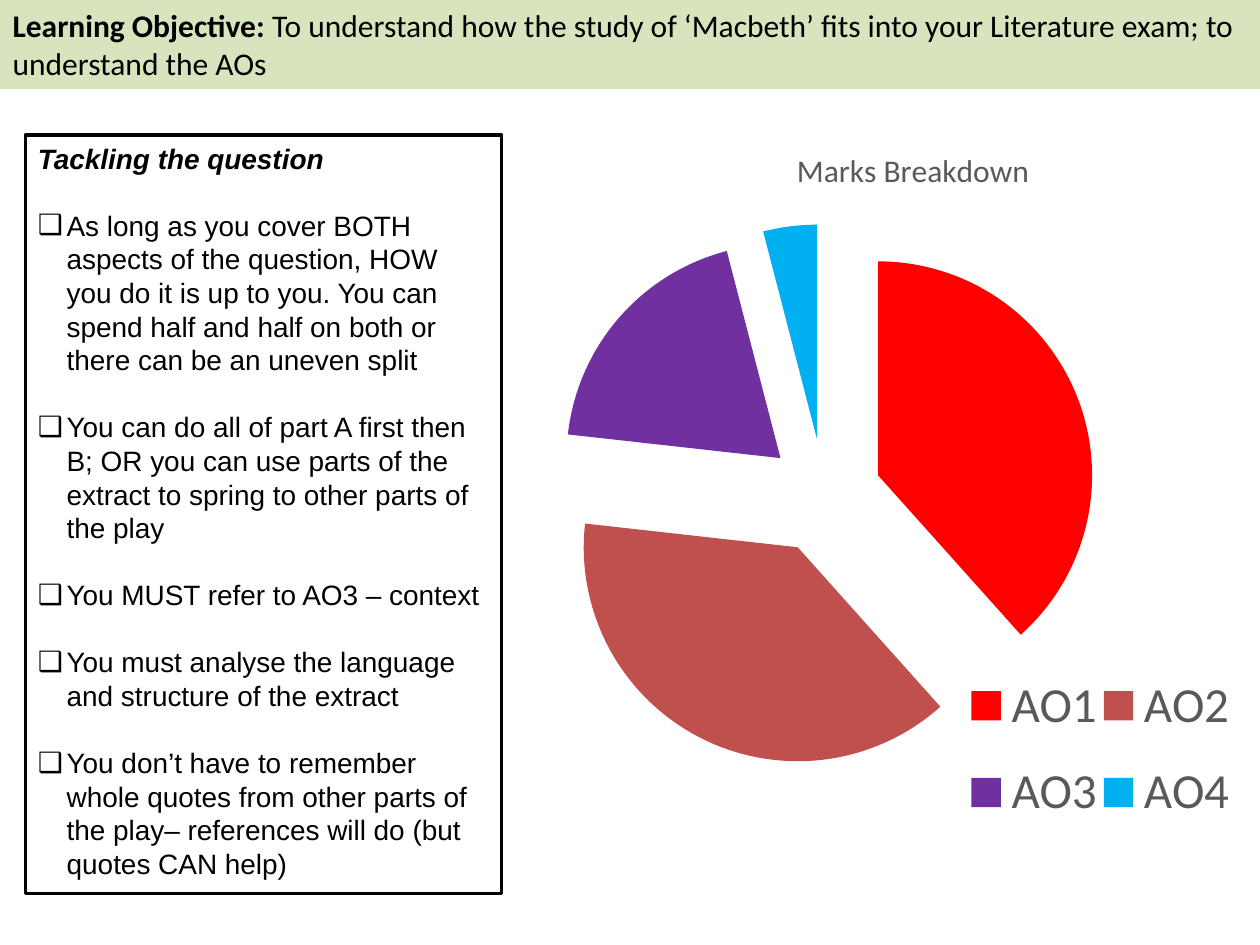
from lxml.etree import SubElement
from pptx import Presentation
from pptx.chart.data import CategoryChartData
from pptx.dml.color import RGBColor
from pptx.enum.chart import XL_CHART_TYPE, XL_LEGEND_POSITION
from pptx.enum.text import MSO_ANCHOR, MSO_AUTO_SIZE, PP_ALIGN
from pptx.oxml import parse_xml
from pptx.oxml.ns import nsdecls, qn
from pptx.util import Cm, Pt

COLORS = {
    "ink": "000000", "paper": "FFFFFF", "band": "D7E4BD", "gray": "595959",
    "AO1": "FF0000", "AO2": "C0504D", "AO3": "7030A0", "AO4": "00B0F0",
}
MARKS = {"AO1": 38, "AO2": 38, "AO3": 19, "AO4": 4}
TIPS = [
    "As long as you cover BOTH aspects of the question, HOW you do it is up to you. "
    "You can spend half and half on both or there can be an uneven split",
    "You can do all of part A first then B; OR you can use parts of the extract "
    "to spring to other parts of the play",
    "You MUST refer to AO3 – context",
    "You must analyse the language and structure of the extract",
    "You don’t have to remember whole quotes from other parts of the play– "
    "references will do (but quotes CAN help)",
]
LINE = Pt(19.2)


def color(name):
    return RGBColor.from_string(COLORS[name])


def paint(target, name):
    target.fill.solid()
    target.fill.fore_color.rgb = color(name)


def style(font, face, size, name, bold=None):
    font.name, font.size, font.bold = face, Pt(size), bold
    font.color.rgb = color(name)


def place(shape, box, fill):
    shape.left, shape.top, shape.width, shape.height = map(Cm, box)
    paint(shape, fill)
    frame = shape.text_frame
    frame.word_wrap = True
    frame.auto_size = MSO_AUTO_SIZE.NONE
    frame.vertical_anchor = MSO_ANCHOR.TOP
    return frame


def add_header(slide, box):
    para = place(slide.shapes.title, box, "band").paragraphs[0]
    para.alignment = PP_ALIGN.LEFT
    style(para.font, "Calibri", 18, "ink")
    label = para.add_run()
    label.text = "Learning Objective: "
    label.font.bold = True
    para.add_run().text = ("To understand how the study of ‘Macbeth’ fits into your "
                           "Literature exam; to understand the AOs")


def set_bullet(para, mark=None):
    props = para._p.get_or_add_pPr()
    indent = Cm(0.58) if mark else 0
    props.set("marL", str(indent))
    props.set("indent", str(-indent))
    if mark:
        SubElement(props, qn("a:buFont")).set("typeface", "Arial")
        SubElement(props, qn("a:buChar")).set("char", mark)
    else:
        SubElement(props, qn("a:buNone"))


def add_tips(slide, box):
    shape = slide.placeholders[1]
    frame = place(shape, box, "paper")
    shape.line.color.rgb = color("ink")
    shape.line.width = Pt(2)
    for i, text in enumerate(["Tackling the question"] + TIPS):
        para = frame.add_paragraph() if i else frame.paragraphs[0]
        para.text = text
        para.line_spacing = LINE
        para.space_before = LINE if i else Pt(0)
        set_bullet(para, "❑" if i else None)
        style(para.font, "Arial", 16, "ink", i == 0)
        para.font.italic = i == 0


def set_layout(part, index, **spots):
    for old in part.findall(qn("c:layout")):
        part.remove(old)
    layout = parse_xml(f"<c:layout {nsdecls('c')}/>")
    manual = SubElement(layout, qn("c:manualLayout"))
    if "w" in spots:
        if part.tag == qn("c:plotArea"):
            SubElement(manual, qn("c:layoutTarget")).set("val", "inner")
    for axis in "xy":
        SubElement(manual, qn(f"c:{axis}Mode")).set("val", "edge")
    for key, value in spots.items():
        SubElement(manual, qn(f"c:{key}")).set("val", str(value))
    part.insert(index, layout)


def add_pie(slide, box):
    data = CategoryChartData()
    data.categories = list(MARKS)
    data.add_series("Series 1", list(MARKS.values()))
    chart = slide.shapes.add_chart(XL_CHART_TYPE.PIE, *map(Cm, box), data).chart
    style(chart.font, "Calibri", 10, "ink")
    chart.has_title = True
    para = chart.chart_title.text_frame.paragraphs[0]
    para.text = "Marks Breakdown"
    style(para.font, "Calibri", 18, "gray", False)
    chart.has_legend = True
    chart.legend.position = XL_LEGEND_POSITION.BOTTOM
    chart.legend.include_in_layout = False
    style(chart.legend.font, "Calibri", 28, "gray")

    plot = chart.plots[0]
    plot.vary_by_categories = True
    series = plot.series[0]
    for i, name in enumerate(MARKS):
        paint(series.points[i].format, name)
    burst = parse_xml(f'<c:explosion {nsdecls("c")} val="27"/>')
    series._element.find(qn("c:tx")).addnext(burst)

    root = chart._chartSpace
    body = root.find(qn("c:chart"))
    body.addnext(parse_xml(f"<c:spPr {nsdecls('c', 'a')}><a:noFill/>"
                           "<a:ln><a:noFill/></a:ln></c:spPr>"))
    set_layout(body.find(qn("c:title")), 1, x=0.46, y=0.01)
    set_layout(body.find(qn("c:plotArea")), 0, x=0.17, y=0.12, w=0.66, h=0.73)
    set_layout(body.find(qn("c:legend")), 1, x=0.67, y=0.69, w=0.33, h=0.27)


def main():
    deck = Presentation()
    deck.slide_width, deck.slide_height = Cm(25.4), Cm(19.05)
    slide = deck.slides.add_slide(deck.slide_layouts[1])
    add_tips(slide, (0.51, 2.72, 9.6, 15.29))
    add_pie(slide, (8.31, 2.72, 16.61, 15.01))
    add_header(slide, (0, 0, 25.4, 1.8))
    deck.save("out.pptx")


if __name__ == "__main__":
    main()
